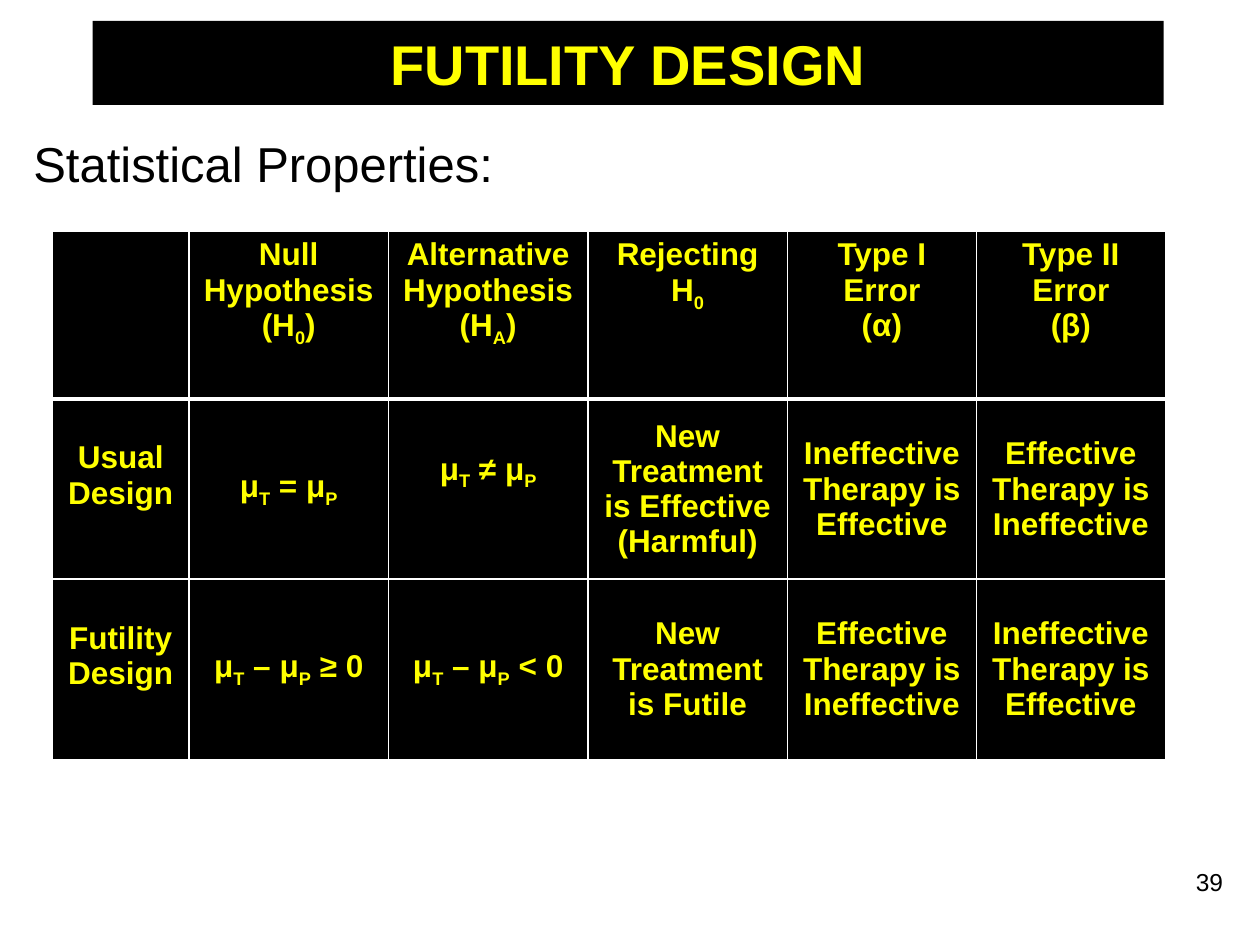
import pptx
import pptx.dml.color
import pptx.enum.shapes
import pptx.enum.text
import pptx.oxml
import pptx.oxml.ns
import pptx.util

Pt = pptx.util.Pt
RGBColor = pptx.dml.color.RGBColor
ALIGN = pptx.enum.text.PP_ALIGN
ANCHOR = pptx.enum.text.MSO_ANCHOR

BLACK = RGBColor(0x00, 0x00, 0x00)
WHITE = RGBColor(0xFF, 0xFF, 0xFF)
YELLOW = RGBColor(0xFF, 0xFF, 0x00)

TITLE_FONT = {"name": "Arial", "size": Pt(32), "bold": True}
SUBTITLE_FONT = {"name": "Arial", "size": Pt(28)}
CELL_FONT = {"name": "Arial", "size": Pt(18), "bold": True}
NUMBER_FONT = {"name": "Arial", "size": Pt(14)}

COLUMN_WIDTHS = [78, 114, 114, 114, 108, 108]
ROW_HEIGHTS = [96, 103, 103]
BLANK_LINE = 20

# Text between two ~ marks is subscript
DESIGNS = [
    ["", "Null\nHypothesis\n(H~0~)", "Alternative\nHypothesis\n(H~A~)",
     "Rejecting H~0~", "Type I Error\n(α)", "Type II Error\n(β)"],
    ["Usual\nDesign", "μ~T~ = μ~P~", "μ~T~ ≠ μ~P~",
     "New Treatment is Effective\n(Harmful)",
     "Ineffective Therapy is Effective", "Effective Therapy is Ineffective"],
    ["Futility\nDesign", "μ~T~ – μ~P~ ≥ 0", "μ~T~ – μ~P~ < 0",
     "New Treatment is Futile",
     "Effective Therapy is Ineffective", "Ineffective Therapy is Effective"],
]


def write(frame, text, formats, color, align):
    frame.word_wrap = True
    paragraph = frame.paragraphs[0]
    paragraph.alignment = align
    for part, piece in enumerate(text.split("~")):
        for line, words in enumerate(piece.split("\n")):
            if line:
                paragraph.add_line_break()
            if not words:
                continue
            run = paragraph.add_run()
            run.text = words
            for key, value in formats.items():
                setattr(run.font, key, value)
            run.font.color.rgb = color
            if part % 2:
                run.font._element.set("baseline", "-25000")


def set_borders(cell, bottom_width):
    properties = cell._tc.get_or_add_tcPr()
    widths = {"lnL": 1, "lnR": 1, "lnT": 1, "lnB": bottom_width}
    for position, (side, width) in enumerate(widths.items()):
        properties.insert(position, pptx.oxml.parse_xml(
            f'<a:{side} {pptx.oxml.ns.nsdecls("a")} w="{Pt(width)}">'
            f'<a:solidFill><a:srgbClr val="{WHITE}"/></a:solidFill></a:{side}>'))


def add_label(slide, box, text, formats, align):
    label = slide.shapes.add_textbox(*map(Pt, box))
    write(label.text_frame, text, formats, BLACK, align)


def add_title(slide, box):
    banner = slide.shapes.add_shape(
        pptx.enum.shapes.MSO_SHAPE.RECTANGLE, *map(Pt, box))
    banner.shadow.inherit = False
    banner.fill.solid()
    banner.fill.fore_color.rgb = BLACK
    banner.line.fill.background()
    banner.text_frame.vertical_anchor = ANCHOR.MIDDLE
    write(banner.text_frame, "FUTILITY DESIGN", TITLE_FONT, YELLOW, ALIGN.CENTER)


def add_design_table(slide, box):
    table = slide.shapes.add_table(
        len(ROW_HEIGHTS), len(COLUMN_WIDTHS), *map(Pt, box)).table
    table.horz_banding = False
    for column, width in zip(table.columns, COLUMN_WIDTHS):
        column.width = Pt(width)
    for row, height in zip(table.rows, ROW_HEIGHTS):
        row.height = Pt(height)

    for r, texts in enumerate(DESIGNS):
        for c, text in enumerate(texts):
            cell = table.cell(r, c)
            cell.fill.solid()
            cell.fill.fore_color.rgb = BLACK
            # Headings and design names hang from the top
            cell.vertical_anchor = ANCHOR.MIDDLE if r and c else ANCHOR.TOP
            if r and not c:
                cell.margin_top = Pt(3.6 + BLANK_LINE)
            if "≠" in text:
                cell.margin_bottom = Pt(3.6 + BLANK_LINE)
            set_borders(cell, 1 if r else 3)
            write(cell.text_frame, text, CELL_FONT, YELLOW, ALIGN.CENTER)


def main():
    deck = pptx.Presentation()
    deck.slide_width, deck.slide_height = Pt(720), Pt(540)
    slide = deck.slides.add_slide(deck.slide_layouts[6])

    # Subtitle, table, title banner, slide number
    add_label(slide, (12, 73, 696, 41), "Statistical Properties:",
              SUBTITLE_FONT, ALIGN.LEFT)
    add_design_table(slide, (30, 132, sum(COLUMN_WIDTHS), sum(ROW_HEIGHTS)))
    add_title(slide, (53, 12, 612, 48))
    add_label(slide, (573, 492, 133, 36), "39", NUMBER_FONT, ALIGN.RIGHT)

    deck.save("out.pptx")


if __name__ == "__main__":
    main()
